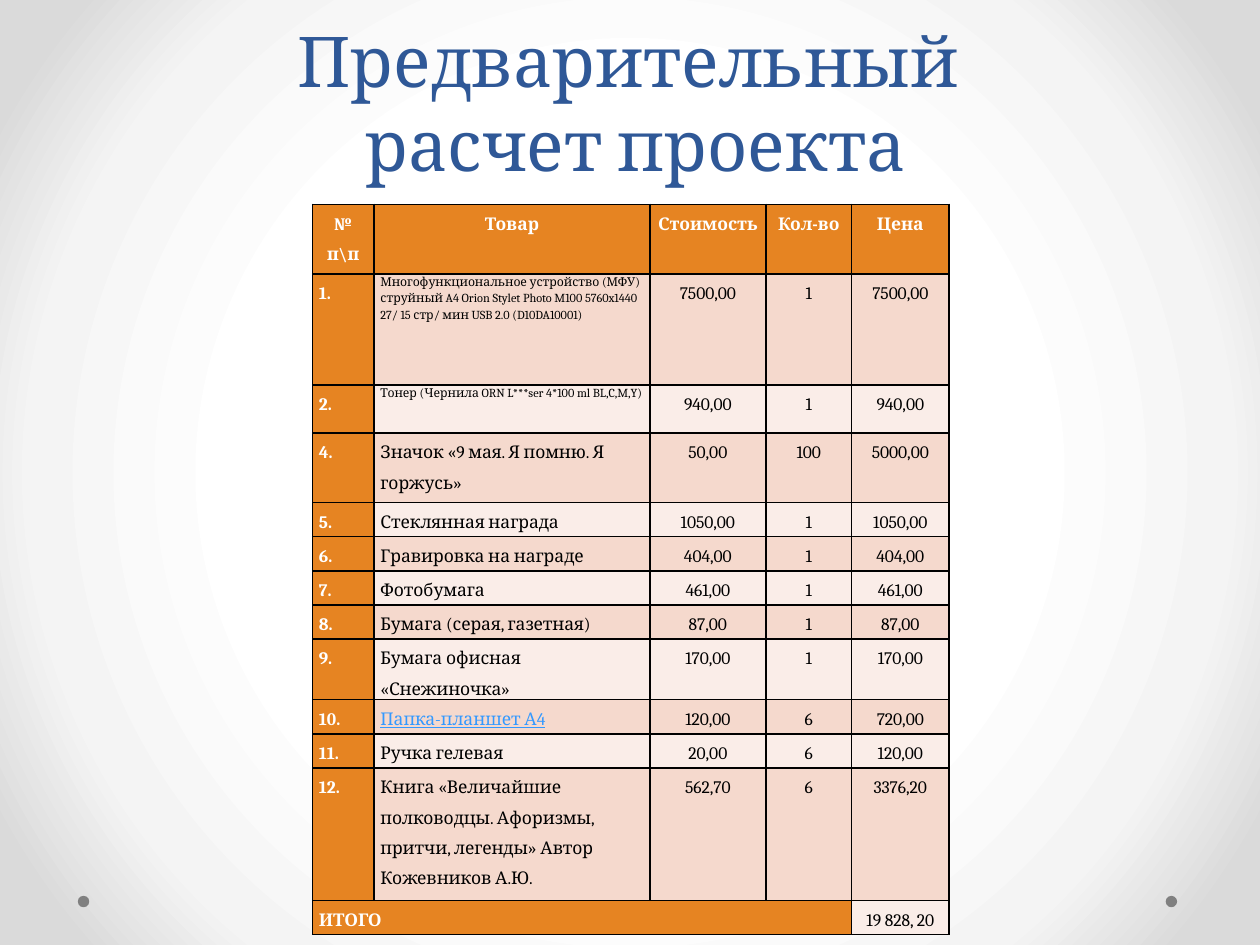
from dataclasses import dataclass

import pptx
import pptx.dml.color
import pptx.enum.shapes
import pptx.enum.text
import pptx.oxml
import pptx.oxml.ns
import pptx.util
from pptx.util import Cm, Pt

ALIGN = pptx.enum.text.PP_ALIGN


@dataclass(frozen=True)
class Theme:
    font: str = "Cambria"
    title: str = "2F5897"
    accent: str = "E68422"
    band_dark: str = "F5D9CD"
    band_light: str = "FAEDE8"
    white: str = "FFFFFF"
    black: str = "000000"
    link: str = "3399FF"
    dot: str = "808080"
    backdrop: tuple = ((50, "FFFFFF"), (76, "F4F4F4"), (92, "DADADA"))
    title_size: float = 40
    body_size: float = 10
    fine_size: float = 7
    border: float = 1


@dataclass(frozen=True)
class Item:
    number: str
    name: str
    cost: str
    count: str
    price: str
    height: float = 0.69


@dataclass(frozen=True)
class Style:
    fill: str
    color: str = "000000"
    size: float = 10
    bold: bool = False
    underline: bool = False
    align: ALIGN = ALIGN.LEFT
    spacing: float = 1.5
    before: float = 0
    after: float = 0


THEME = Theme()
HEADERS = ("№ п\\п", "Товар", "Стоимость", "Кол-во", "Цена")
COLUMNS = (1.24, 5.56, 2.34, 1.73, 1.96)
HEADER_HEIGHT, TOTAL_HEIGHT = 1.4, 0.69
ITEMS = (
    Item("1.", "Многофункциональное устройство (МФУ) струйный A4 Orion Stylet Photo "
         "M100 5760x1440 27/ 15 стр/ мин USB 2.0 (D10DA10001)",
         "7500,00", "1", "7500,00", 2.24),
    Item("2.", "Тонер (Чернила ORN L***ser 4*100 ml BL,C,M,Y)",
         "940,00", "1", "940,00", 0.97),
    Item("4.", "Значок «9 мая. Я помню. Я горжусь»", "50,00", "100", "5000,00", 1.4),
    Item("5.", "Стеклянная награда", "1050,00", "1", "1050,00"),
    Item("6.", "Гравировка на награде", "404,00", "1", "404,00"),
    Item("7.", "Фотобумага", "461,00", "1", "461,00"),
    Item("8.", "Бумага (серая, газетная)", "87,00", "1", "87,00"),
    Item("9.", "Бумага офисная «Снежиночка»", "170,00", "1", "170,00"),
    Item("10.", "Папка-планшет А4", "120,00", "6", "720,00"),
    Item("11.", "Ручка гелевая", "20,00", "6", "120,00"),
    Item("12.", "Книга «Величайшие полководцы. Афоризмы, притчи, легенды» "
         "Автор Кожевников А.Ю.", "562,70", "6", "3376,20", 2.67),
)
NAME_STYLES = {
    "1.": dict(size=THEME.fine_size, spacing=1.15, before=24, after=7.5),
    "2.": dict(size=THEME.fine_size, spacing=1.15, before=24),
    "10.": dict(color=THEME.link, underline=True),
}


def rgb(value: str) -> pptx.dml.color.RGBColor:
    return pptx.dml.color.RGBColor.from_string(value)


def set_backdrop(s) -> None:
    """Fill the slide with a circular gradient spreading from its centre."""
    s.background.fill.gradient()
    grad = s.element.find(".//" + pptx.oxml.ns.qn("a:gradFill"))
    stops = "".join(f'<a:gs pos="{pos * 1000}"><a:srgbClr val="{color}"/></a:gs>'
                    for pos, color in THEME.backdrop)
    radial = pptx.oxml.parse_xml(
        f'<a:gradFill {pptx.oxml.ns.nsdecls("a")} rotWithShape="1"><a:gsLst>{stops}</a:gsLst>'
        '<a:path path="circle"><a:fillToRect l="50000" t="50000" r="50000" b="50000"/>'
        '</a:path></a:gradFill>')
    grad.getparent().replace(grad, radial)


def add_dot(s, left: float) -> None:
    sp = s.shapes.add_shape(pptx.enum.shapes.MSO_SHAPE.OVAL,
                            Cm(left), Cm(18.06), Cm(0.23), Cm(0.23))
    sp.shadow.inherit = False
    sp.fill.solid()
    sp.fill.fore_color.rgb = rgb(THEME.dot)
    sp.line.fill.background()


def set_font(p, size: float, color: str, bold: bool = False, underline: bool = False) -> None:
    p.font.name = THEME.font
    p.font.size = Pt(size)
    p.font.color.rgb = rgb(color)
    p.font.bold = bold
    p.font.underline = underline


def set_title(s, text: str) -> None:
    sp = s.shapes.title
    sp.left, sp.top, sp.width, sp.height = Cm(0.71), Cm(0.53), Cm(24.21), Cm(3.33)
    tf = sp.text_frame
    tf.text = text
    tf.word_wrap = True
    tf.auto_size = pptx.enum.text.MSO_AUTO_SIZE.NONE
    tf.vertical_anchor = pptx.enum.text.MSO_ANCHOR.BOTTOM
    p = tf.paragraphs[0]
    p.alignment = ALIGN.CENTER
    set_font(p, THEME.title_size, THEME.title)


def add_borders(cell) -> None:
    props = cell._tc.get_or_add_tcPr()
    for side in ("lnL", "lnR", "lnT", "lnB"):
        props.append(pptx.oxml.parse_xml(
            f'<a:{side} {pptx.oxml.ns.nsdecls("a")} w="{Pt(THEME.border)}"><a:solidFill>'
            f'<a:srgbClr val="{THEME.black}"/></a:solidFill></a:{side}>'))


def fill_cell(cell, text: str, style: Style) -> None:
    add_borders(cell)
    cell.fill.solid()
    cell.fill.fore_color.rgb = rgb(style.fill)
    cell.margin_left = cell.margin_right = Cm(0.13)
    cell.margin_top = cell.margin_bottom = 0
    cell.text = text
    p = cell.text_frame.paragraphs[0]
    p.alignment = style.align
    p.line_spacing = style.spacing
    p.space_before, p.space_after = Pt(style.before), Pt(style.after)
    set_font(p, style.size, style.color, style.bold, style.underline)


def add_estimate(s) -> None:
    heights = [HEADER_HEIGHT, *(item.height for item in ITEMS), TOTAL_HEIGHT]
    table = s.shapes.add_table(len(heights), len(COLUMNS), Cm(6.3), Cm(4.12),
                               Cm(sum(COLUMNS)), Cm(sum(heights))).table
    table.first_row = table.horz_banding = False
    for column, width in zip(table.columns, COLUMNS):
        column.width = Cm(width)
    for row, height in zip(table.rows, heights):
        row.height = Cm(height)

    heading = Style(THEME.accent, THEME.white, bold=True, align=ALIGN.CENTER)
    label = Style(THEME.accent, THEME.white, bold=True)
    for col, text in enumerate(HEADERS):
        fill_cell(table.cell(0, col), text, heading)
    for row, item in enumerate(ITEMS, 1):
        band = THEME.band_dark if row % 2 else THEME.band_light
        fill_cell(table.cell(row, 0), item.number, label)
        fill_cell(table.cell(row, 1), item.name,
                  Style(band, **NAME_STYLES.get(item.number, {})))
        for col, text in enumerate((item.cost, item.count, item.price), 2):
            fill_cell(table.cell(row, col), text, Style(band, align=ALIGN.CENTER))

    last, price = len(heights) - 1, len(COLUMNS) - 1
    for col in range(price):
        fill_cell(table.cell(last, col), "" if col else "ИТОГО", label)
    table.cell(last, 0).merge(table.cell(last, price - 1))
    fill_cell(table.cell(last, price), "19 828, 20",
              Style(THEME.band_light, align=ALIGN.CENTER))


def main() -> None:
    prs = pptx.Presentation()
    prs.slide_width, prs.slide_height = Cm(25.4), Cm(19.05)
    s = prs.slides.add_slide(prs.slide_layouts[5])
    set_backdrop(s)
    for left in (23.5, 1.57):
        add_dot(s, left)
    set_title(s, "Предварительный \vрасчет проекта")
    add_estimate(s)
    prs.save("out.pptx")


if __name__ == "__main__":
    main()
